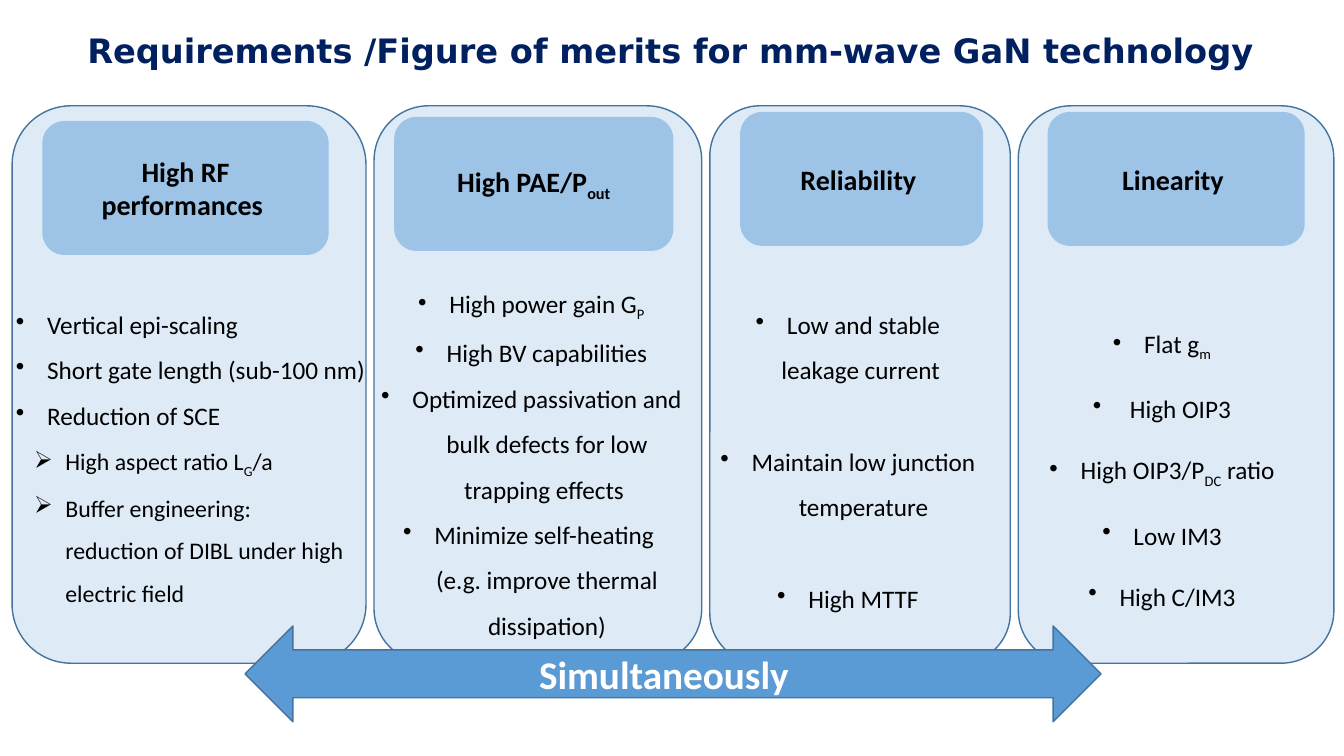
from dataclasses import dataclass

from lxml import etree
from pptx import Presentation
from pptx.dml.color import RGBColor
from pptx.enum.shapes import MSO_SHAPE
from pptx.enum.text import MSO_ANCHOR, MSO_AUTO_SIZE, PP_ALIGN
from pptx.oxml.ns import qn
from pptx.util import Inches, Pt

ROUNDED = MSO_SHAPE.ROUNDED_RECTANGLE
DOUBLE_ARROW = MSO_SHAPE.LEFT_RIGHT_ARROW
CENTER, LEFT = PP_ALIGN.CENTER, PP_ALIGN.LEFT
MIDDLE = MSO_ANCHOR.MIDDLE
TITLE_ONLY = 5


@dataclass(frozen=True)
class Theme:
    title_font: str = "DejaVu Sans"
    body_font: str = "Calibri"
    navy: str = "002060"
    black: str = "000000"
    white: str = "FFFFFF"
    card: str = "DEEBF7"
    header: str = "9DC3E6"
    arrow: str = "5B9BD5"
    outline: str = "43739E"
    title_size: int = 24
    header_size: int = 20
    body_size: int = 18
    sub_size: int = 17
    arrow_size: int = 28


THEME = Theme()


@dataclass(frozen=True)
class Requirement:
    """Header and list boxes are (left, top, width, height) from the card's corner."""
    heading: str
    width: float
    header_box: tuple
    list_box: tuple
    points: tuple
    sub_points: tuple = ()
    align: int = CENTER
    line_spacing: float = 1.5
    gap: int = 0


CARD_LEFT, CARD_TOP, CARD_HEIGHT, CARD_GAP = 0.12, 1.05, 5.53, 0.08
REQUIREMENTS = (
    Requirement(
        "High RF performances ", 3.51, (0.3, 0.15, 2.84, 1.33), (-0.06, 1.82, 3.81, 3.14),
        ("Vertical epi-scaling", "Short gate length (sub-100 nm)", "Reduction of SCE"),
        ("High aspect ratio L{G}/a",
         "Buffer engineering: \nreduction of DIBL under high electric field"),
        align=LEFT),
    Requirement(
        "High PAE/P{out}", 3.25, (0.2, 0.11, 2.77, 1.33), (-0.09, 1.59, 3.3, 3.69),
        ("High power gain G{P}", "High BV capabilities",
         "Optimized passivation and bulk defects for low trapping effects ",
         "Minimize self-heating \n(e.g. improve thermal dissipation)")),
    Requirement(
        "Reliability ", 2.98, (0.3, 0.06, 2.41, 1.33), (-0.03, 1.82, 2.8, 3.23),
        ("Low and stable leakage current ", "Maintain low junction temperature",
         "High MTTF"),
        gap=33),
    Requirement(
        "Linearity ", 3.13, (0.29, 0.06, 2.55, 1.33), (0.01, 2.16, 2.83, 2.73),
        ("Flat g{m}", " High OIP3", "High OIP3/P{DC} ratio", "Low IM3", "High C/IM3"),
        line_spacing=1.0, gap=22),
)


def write(paragraph, text, *, size, color=THEME.black, font=THEME.body_font,
          bold=False, align=CENTER):
    """Write text in which {braces} mark subscripts and newlines mark line breaks."""
    paragraph.alignment = align
    for line_number, line in enumerate(text.split("\n")):
        if line_number:
            paragraph.add_line_break()
        for index, piece in enumerate(line.replace("}", "{").split("{")):
            if not piece:
                continue
            run = paragraph.add_run()
            run.text = piece
            run.font.size = Pt(size)
            run.font.name = font
            run.font.bold = bold
            run.font.color.rgb = RGBColor.from_string(color)
            if index % 2:
                run._r.get_or_add_rPr().set("baseline", "-25000")


def add_bullet(paragraph, mark, indent):
    properties = paragraph._p.get_or_add_pPr()
    properties.set("marL", str(Inches(indent)))
    properties.set("indent", str(Inches(-0.31)))
    etree.SubElement(properties, qn("a:buChar")).set("char", mark)


def add_block(slide, kind, box, fill, outline=None):
    block = slide.shapes.add_shape(kind, *map(Inches, box))
    block.shadow.inherit = False
    block.fill.solid()
    block.fill.fore_color.rgb = RGBColor.from_string(fill)
    if outline:
        block.line.color.rgb = RGBColor.from_string(outline)
        block.line.width = Pt(1)
    else:
        block.line.fill.background()
    block.text_frame.vertical_anchor = MIDDLE
    return block


def add_title(slide, box):
    title = slide.shapes.title
    title.left, title.top, title.width, title.height = map(Inches, box)
    frame = title.text_frame
    frame.auto_size = MSO_AUTO_SIZE.NONE
    frame.vertical_anchor = MIDDLE
    write(frame.paragraphs[0], "Requirements /Figure of merits for mm-wave GaN technology",
          size=THEME.title_size, color=THEME.navy, font=THEME.title_font, bold=True)


def add_points(slide, box, requirement):
    frame = slide.shapes.add_textbox(*map(Inches, box)).text_frame
    frame.word_wrap = True
    entries = [(point, "•", 0.31, THEME.body_size) for point in requirement.points]
    entries += [(point, "➢", 0.49, THEME.sub_size) for point in requirement.sub_points]
    for number, (point, mark, indent, size) in enumerate(entries):
        paragraph = frame.add_paragraph() if number else frame.paragraphs[0]
        paragraph.line_spacing = requirement.line_spacing
        paragraph.space_before = Pt(requirement.gap if number else 0)
        write(paragraph, point, size=size, align=requirement.align)
        add_bullet(paragraph, mark, indent)


def add_requirement(slide, box, requirement):
    left, top = box[:2]

    def inside(part):
        return left + part[0], top + part[1], part[2], part[3]

    add_block(slide, ROUNDED, box, THEME.card, THEME.outline)
    header = add_block(slide, ROUNDED, inside(requirement.header_box), THEME.header)
    write(header.text_frame.paragraphs[0], requirement.heading,
          size=THEME.header_size, bold=True)
    add_points(slide, inside(requirement.list_box), requirement)


def add_arrow(slide, box):
    arrow = add_block(slide, DOUBLE_ARROW, box, THEME.arrow, THEME.outline)
    arrow.text_frame.margin_right = Inches(0.28)
    write(arrow.text_frame.paragraphs[0], "Simultaneously",
          size=THEME.arrow_size, color=THEME.white, bold=True)


def main():
    deck = Presentation()
    deck.slide_width, deck.slide_height = Inches(13.33), Inches(7.5)
    slide = deck.slides.add_slide(deck.slide_layouts[TITLE_ONLY])
    add_title(slide, (0.12, 0.25, 13.06, 0.5))
    left = CARD_LEFT
    for requirement in REQUIREMENTS:
        add_requirement(slide, (left, CARD_TOP, requirement.width, CARD_HEIGHT), requirement)
        left += requirement.width + CARD_GAP
    add_arrow(slide, (2.43, 6.21, 8.49, 0.95))
    deck.save("out.pptx")


if __name__ == "__main__":
    main()
